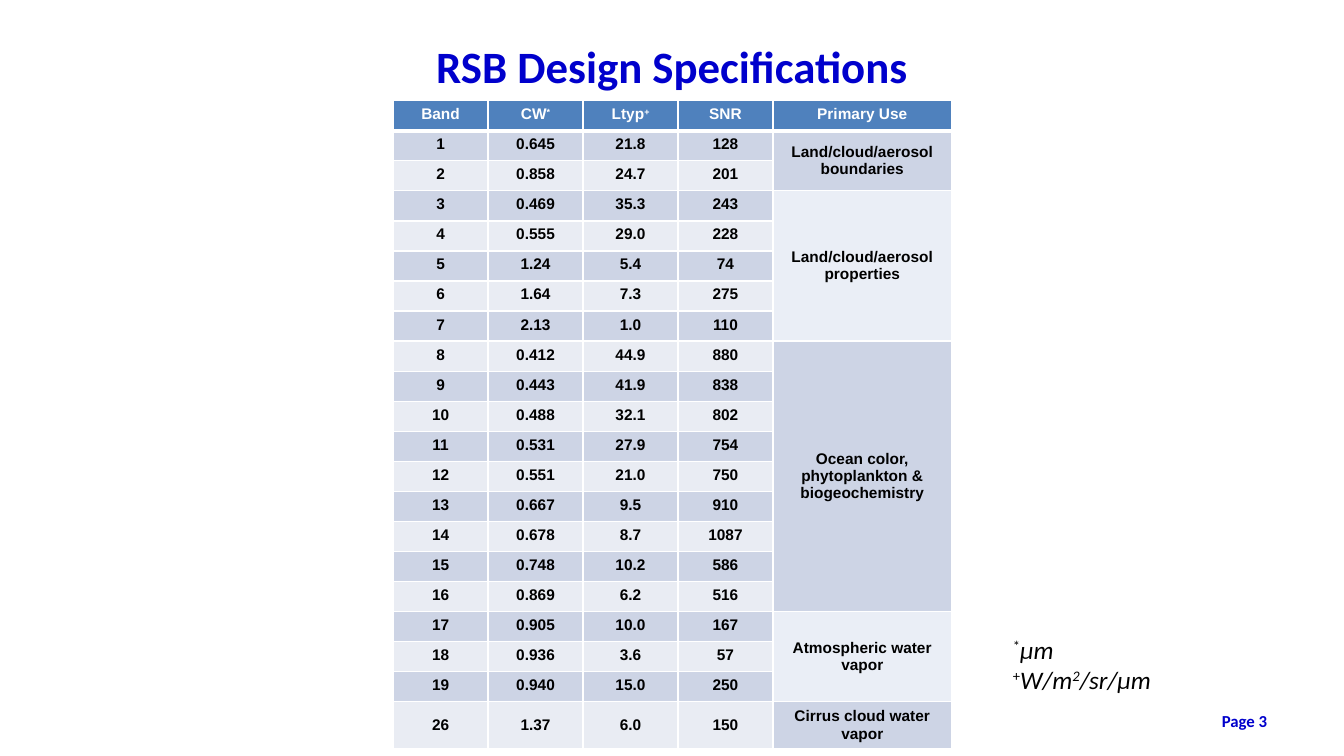
from dataclasses import dataclass
from lxml.etree import SubElement
from pptx import Presentation
from pptx.dml.color import RGBColor
from pptx.enum.text import MSO_ANCHOR, MSO_AUTO_SIZE, PP_ALIGN
from pptx.oxml.ns import qn
from pptx.util import Inches, Pt


@dataclass(frozen=True)
class Theme:
    blue: str = "0000CC"
    head: str = "4F81BD"
    dark: str = "CDD4E5"
    light: str = "E9ECF3"
    pale: str = "EAEEF6"
    white: str = "FFFFFF"
    black: str = "000000"
    sans: str = "Calibri"
    grid: str = "Arial"
    title: int = 32
    note: int = 18
    page: int = 12
    cell: int = 11
    thin: float = 0.96
    thick: float = 3


T = Theme()
WIDE, HIGH = Inches(13.33), Inches(7.5)
HEADS = ("Band", "CW^*", "Ltyp^+", "SNR", "Primary Use")
SHARES = (0.17, 0.17, 0.17, 0.17, 0.32)
GROUPS = (
    ("Land/cloud/aerosol boundaries", T.dark, (
        ("1", "0.645", "21.8", "128"),
        ("2", "0.858", "24.7", "201"))),
    ("Land/cloud/aerosol properties", T.pale, (
        ("3", "0.469", "35.3", "243"),
        ("4", "0.555", "29.0", "228"),
        ("5", "1.24", "5.4", "74"),
        ("6", "1.64", "7.3", "275"),
        ("7", "2.13", "1.0", "110"))),
    ("Ocean color, phytoplankton & biogeochemistry", T.dark, (
        ("8", "0.412", "44.9", "880"),
        ("9", "0.443", "41.9", "838"),
        ("10", "0.488", "32.1", "802"),
        ("11", "0.531", "27.9", "754"),
        ("12", "0.551", "21.0", "750"),
        ("13", "0.667", "9.5", "910"),
        ("14", "0.678", "8.7", "1087"),
        ("15", "0.748", "10.2", "586"),
        ("16", "0.869", "6.2", "516"))),
    ("Atmospheric water vapor", T.pale, (
        ("17", "0.905", "10.0", "167"),
        ("18", "0.936", "3.6", "57"),
        ("19", "0.940", "15.0", "250"))),
    ("Cirrus cloud water vapor", T.dark, (
        ("26", "1.37", "6.0", "150"),)),
)


def area(x, y, w, h):
    return [int(size * part / 100)
            for size, part in ((WIDE, x), (HIGH, y), (WIDE, w), (HIGH, h))]


def style(para, face, size, color, bold=False, align=PP_ALIGN.CENTER):
    para.alignment = align
    font = para.font
    font.name, font.size, font.bold = face, Pt(size), bold
    font.color.rgb = RGBColor.from_string(color)


def add_run(para, text, raised=False, slant=None):
    run = para.add_run()
    run.text = text
    if slant is not None:
        run.font.italic = slant
    if raised:
        run._r.get_or_add_rPr().set("baseline", "30000")


def add_line(slide, box, text, size, align):
    frame = slide.shapes.add_textbox(*box).text_frame
    frame.word_wrap = True
    frame.vertical_anchor = MSO_ANCHOR.MIDDLE
    para = frame.paragraphs[0]
    para.text = text
    style(para, T.sans, size, T.blue, True, align)


def add_notes(slide, box):
    frame = slide.shapes.add_textbox(*box).text_frame
    frame.word_wrap = False
    frame.auto_size = MSO_AUTO_SIZE.SHAPE_TO_FIT_TEXT
    lines = (
        (("*", True, False), ("μm", False, True)),
        (("+", True, False), ("W/m", False, True),
         ("2", True, True), ("/sr/μm", False, True)),
    )
    for at, runs in enumerate(lines):
        para = frame.add_paragraph() if at else frame.paragraphs[0]
        for run in runs:
            add_run(para, *run)
        style(para, T.sans, T.note, T.black, align=PP_ALIGN.LEFT)


def edge(cell, row):
    props = cell._tc.get_or_add_tcPr()
    widths = {"L": T.thin, "R": T.thin,
              "T": T.thick if row == 1 else T.thin,
              "B": T.thick if row == 0 else T.thin}
    for side, width in widths.items():
        line = SubElement(props, qn(f"a:ln{side}"), w=str(Pt(width)))
        fill = SubElement(line, qn("a:solidFill"))
        SubElement(fill, qn("a:srgbClr"), val=T.white)


def paint(cell, row, fill, text="", color=T.black, middle=False):
    edge(cell, row)
    cell.fill.solid()
    cell.fill.fore_color.rgb = RGBColor.from_string(fill)
    if middle:
        cell.vertical_anchor = MSO_ANCHOR.MIDDLE
    para = cell.text_frame.paragraphs[0]
    base, _, mark = text.partition("^")
    if base:
        add_run(para, base)
    if mark:
        add_run(para, mark, True)
    style(para, T.grid, T.cell, color, True)


def add_bands(slide, box):
    count = 1 + sum(len(rows) for _, _, rows in GROUPS)
    table = slide.shapes.add_table(count, len(HEADS), *box).table
    table.first_row = table.horz_banding = False
    for col, share in zip(table.columns, SHARES):
        col.width = int(box[2] * share)
    for row in table.rows:
        row.height = box[3] // count
    for col, text in enumerate(HEADS):
        paint(table.cell(0, col), 0, T.head, text, T.white)
    use, row = len(HEADS) - 1, 1
    for name, fill, rows in GROUPS:
        first = row
        for values in rows:
            band = T.dark if row % 2 else T.light
            for col, text in enumerate(values):
                paint(table.cell(row, col), row, band, text,
                      middle=row == count - 1)
            paint(table.cell(row, use), row, fill,
                  name if row == first else "", middle=True)
            row += 1
        if row - first > 1:
            table.cell(first, use).merge(table.cell(row - 1, use))


def main():
    deck = Presentation()
    deck.slide_width, deck.slide_height = WIDE, HIGH
    slide = deck.slides.add_slide(deck.slide_layouts[6])
    add_line(slide, area(12.5, 4, 75, 9.33), "RSB Design Specifications",
             T.title, PP_ALIGN.CENTER)
    add_line(slide, area(71.7, 92.67, 23.33, 5.33), "Page 3",
             T.page, PP_ALIGN.RIGHT)
    add_bands(slide, area(29.25, 13.33, 41.56, 83.45))
    add_notes(slide, area(74.63, 83.2, 12.45, 9.47))
    deck.save("out.pptx")


if __name__ == "__main__":
    main()
